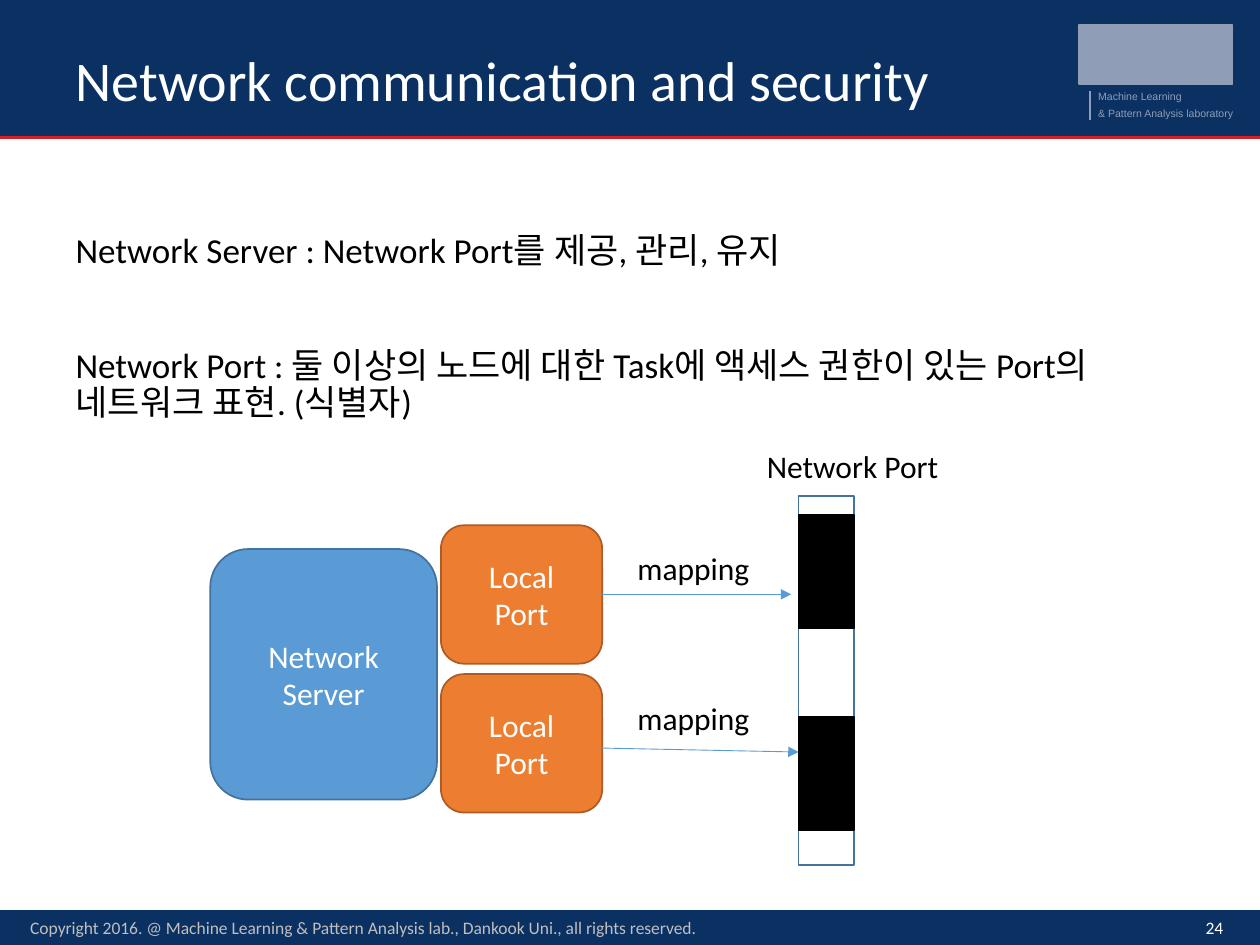
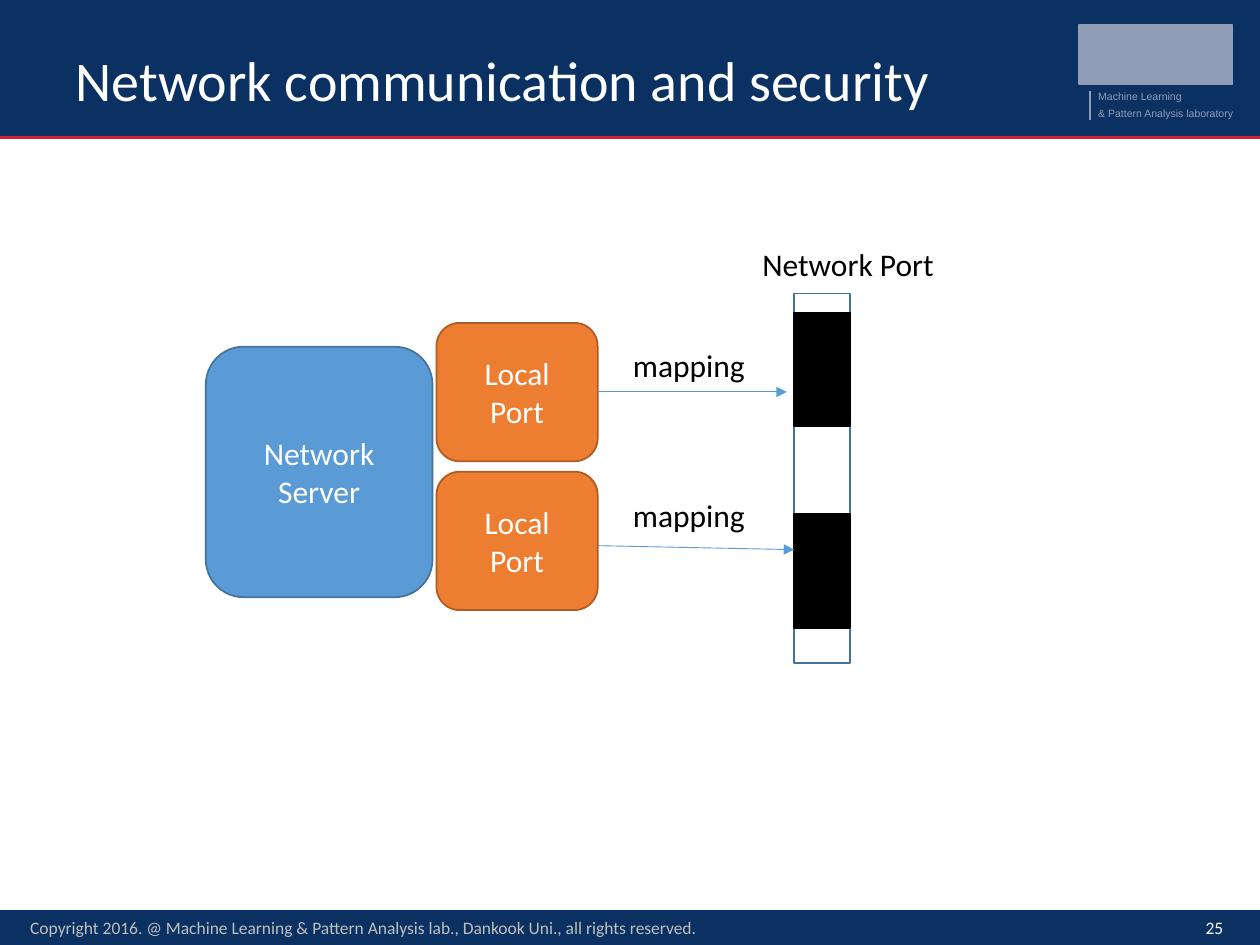
from dataclasses import dataclass

from lxml import etree
from pptx import Presentation
from pptx import util as u
from pptx.dml.color import RGBColor
from pptx.enum import shapes, text
from pptx.oxml import ns


@dataclass(frozen=True)
class Theme:
    navy: str = "0B3162"
    red: str = "D41F28"
    white: str = "FFFFFF"
    black: str = "000000"
    grey: str = "BFBFBF"
    muted: str = "8F9EB6"
    blue: str = "5B9BD5"
    blue_edge: str = "43739E"
    orange: str = "ED7D31"
    orange_edge: str = "AF5C24"
    font: str = "Calibri"
    caption_font: str = "Arial"
    title_size: int = 32
    body_size: int = 20
    label_size: int = 18
    footer_size: int = 10
    caption_size: int = 6


theme = Theme()
RECT = shapes.MSO_SHAPE.RECTANGLE
ROUNDED = shapes.MSO_SHAPE.ROUNDED_RECTANGLE
LEFT, CENTER, RIGHT = text.PP_ALIGN.LEFT, text.PP_ALIGN.CENTER, text.PP_ALIGN.RIGHT
TOP, MIDDLE, BOTTOM = text.MSO_ANCHOR.TOP, text.MSO_ANCHOR.MIDDLE, text.MSO_ANCHOR.BOTTOM


def add_box(page, at, words="", kind=None, fill=None, edge=None, color=theme.black,
            size=theme.label_size, font=theme.font, align=LEFT, anchor=TOP, wrap=True):
    """Add a preset shape, or a text box when no kind is given; lengths in cm."""
    place = [u.Cm(length) for length in at]
    if kind is None:
        box = page.shapes.add_textbox(*place)
    else:
        box = page.shapes.add_shape(kind, *place)
        box.shadow.inherit = False
        box.fill.solid()
        box.fill.fore_color.rgb = RGBColor.from_string(fill)
        box.line.color.rgb = RGBColor.from_string(edge)
        box.line.width = u.Pt(1)
    if words:
        box.text_frame.word_wrap = wrap
        box.text_frame.vertical_anchor = anchor
        para = box.text_frame.paragraphs[0]
        para.text = words
        para.alignment = align
        for name, value in {"name": font, "size": u.Pt(size)}.items():
            setattr(para.font, name, value)
        para.font.color.rgb = RGBColor.from_string(color)
    return box


def add_line(page, start, end, color, width, arrow=False):
    ends = [u.Cm(length) for length in (*start, *end)]
    line = page.shapes.add_connector(shapes.MSO_CONNECTOR.STRAIGHT, *ends)
    line.line.color.rgb = RGBColor.from_string(color)
    line.line.width = u.Pt(width)
    if arrow:
        outline = line.line._get_or_add_ln()
        etree.SubElement(outline, ns.qn("a:tailEnd"), type="triangle")
    etree.SubElement(line.element.spPr, ns.qn("a:effectLst"))
    return line


deck = Presentation()
deck.slide_width, deck.slide_height = u.Cm(25.4), u.Cm(19.05)
TITLE_AND_BODY, TITLE_ONLY = deck.slide_layouts[1], deck.slide_layouts[5]

TITLE = "Network communication and security"
COPYRIGHT = ("Copyright 2016. @ Machine Learning & Pattern Analysis lab., "
             "Dankook Uni., all rights reserved.")
DEFINITIONS = [
    "Network Server : Network Port를 제공, 관리, 유지",
    "Network Port : 둘 이상의 노드에 대한 Task에 액세스 권한이 있는 Port의 네트워크 표현. (식별자)",
]

# Each page: layout, number, body paragraphs, top left corner of the server box
PAGES = [
    (TITLE_AND_BODY, 24, DEFINITIONS, (4.24, 11.07)),
    (TITLE_ONLY, 25, [], (4.15, 6.99)),
]

for layout, number, definitions, (x, y) in PAGES:
    page = deck.slides.add_slide(layout)

    # Bands and lab name are drawn with the first page and moved to the master
    if number == PAGES[0][1]:
        band = {"kind": RECT, "fill": theme.navy, "edge": theme.navy}
        caption = {"size": theme.caption_size, "font": theme.caption_font,
                   "color": theme.muted, "wrap": False}
        shared = [
            add_box(page, (0, 18.37, 25.4, 0.66), **band),
            add_box(page, (0, 0, 25.4, 2.79), **band),
            add_line(page, (0, 2.77), (25.4, 2.77), theme.red, 1.5),
            add_box(page, (21.75, 0.5, 3.1, 1.2), kind=RECT,
                    fill=theme.muted, edge=theme.muted),
            add_box(page, (21.89, 1.68, 2.24, 0.51), "Machine Learning", **caption),
            add_box(page, (21.89, 2.03, 3.28, 0.51),
                    "& Pattern Analysis laboratory", **caption),
            add_line(page, (21.97, 1.83), (21.97, 2.41), theme.muted, 1.5),
        ]
        for part in shared:
            deck.slide_master.shapes.element.append(part.element)

    # Title and body
    blocks = [(page.shapes.title, [TITLE], (1.27, 0.53, 20.62, 1.88),
               theme.title_size, theme.white, {"vertical_anchor": BOTTOM})]
    if definitions:
        blocks.append((page.placeholders[1], definitions, (1.27, 3.33, 22.83, 14.12),
                       theme.body_size, theme.black,
                       {"vertical_anchor": TOP, "margin_top": u.Cm(1.37)}))
    for holder, lines, place, size, color, frame_format in blocks:
        for name, length in zip(("left", "top", "width", "height"), place):
            setattr(holder, name, u.Cm(length))
        frame = holder.text_frame
        frame.text = "\n".join(lines)
        frame.auto_size = text.MSO_AUTO_SIZE.NONE
        frame.word_wrap = True
        for name, value in frame_format.items():
            setattr(frame, name, value)
        for index, para in enumerate(frame.paragraphs):
            properties = para._p.get_or_add_pPr()
            properties.set("marL", "0")
            properties.set("indent", "0")
            etree.SubElement(properties, ns.qn("a:buNone"))
            para_format = {"alignment": LEFT, "line_spacing": 0.9,
                           "space_before": u.Pt(44 if index else 0)}
            for name, value in para_format.items():
                setattr(para, name, value)
            for name, value in {"name": theme.font, "size": u.Pt(size)}.items():
                setattr(para.font, name, value)
            para.font.color.rgb = RGBColor.from_string(color)

    # Footer
    footer = {"size": theme.footer_size, "anchor": MIDDLE}
    add_box(page, (23.16, 18.36, 1.75, 0.69), str(number), color=theme.white,
            align=RIGHT, **footer)
    add_box(page, (0.36, 18.19, 14.02, 1.02), COPYRIGHT, color=theme.grey, **footer)

    # Server, its local ports and the network port column
    node = {"kind": ROUNDED, "color": theme.white, "align": CENTER, "anchor": MIDDLE}
    add_box(page, (x, y, 4.57, 5.05), "Network Server",
            fill=theme.blue, edge=theme.blue_edge, **node)
    add_box(page, (x + 11.86, y - 1.07, 1.12, 7.44), kind=RECT,
            fill=theme.white, edge=theme.blue_edge)
    add_box(page, (x + 10.97, y - 2.18, 4.17, 1.02), "Network Port")
    for row, (tip_x, tip_y) in enumerate([(11.71, 0.91), (11.86, 4.09)]):
        add_box(page, (x + 4.65, y - 0.48 + 3 * row, 3.25, 2.79), "Local Port",
                fill=theme.orange, edge=theme.orange_edge, **node)
        add_box(page, (x + 11.86, y - 0.69 + 4.07 * row, 1.12, 2.29), kind=RECT,
                fill=theme.black, edge=theme.black)
        add_line(page, (x + 7.9, y + 0.91 + 3.1 * row), (x + tip_x, y + tip_y),
                 theme.blue, 0.5, arrow=True)
        add_box(page, (x + 8.36, y - 0.13 + 3.02 * row, 2.92, 1.02), "mapping")

deck.save("out.pptx")
